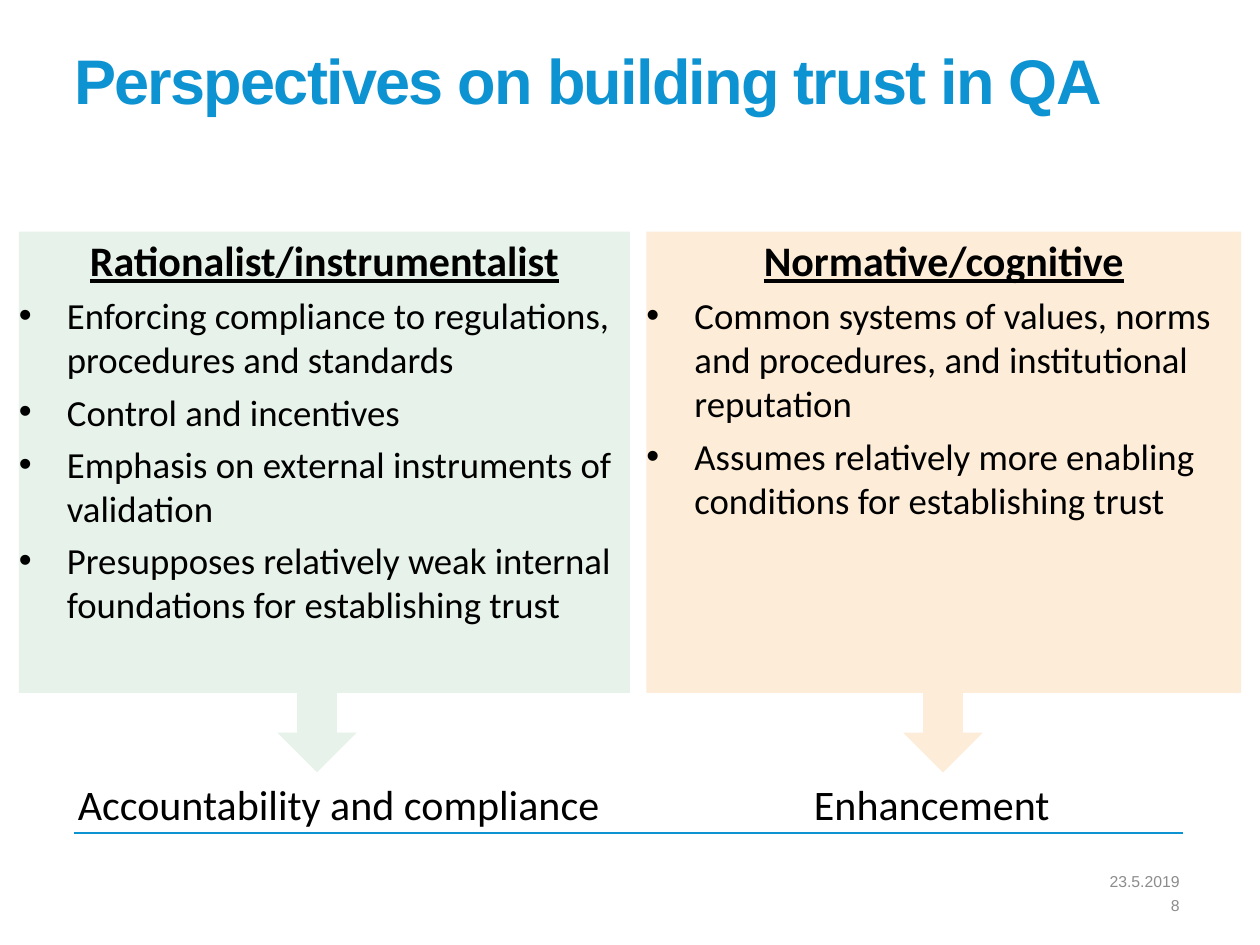
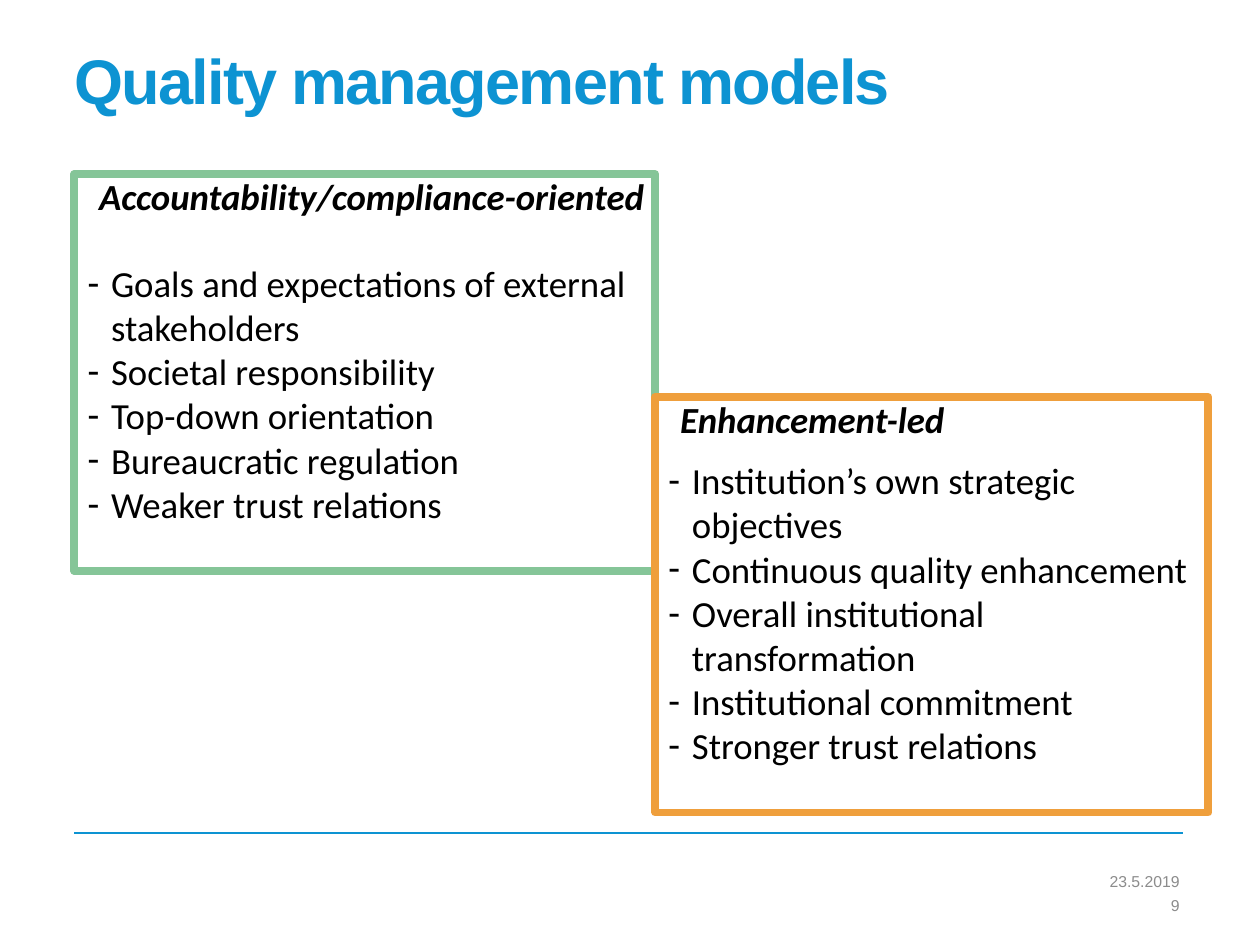
from lxml.etree import SubElement
from pptx import Presentation
from pptx.dml.color import RGBColor
from pptx.enum.shapes import MSO_CONNECTOR, MSO_SHAPE
from pptx.enum.text import MSO_ANCHOR, PP_ALIGN
from pptx.oxml.ns import qn
from pptx.util import Cm, Pt

COLORS = {
    "title": "0D93D2",
    "text": "000000",
    "footer": "8C8C8C",
    "pale green": "E7F3EA",
    "pale orange": "FCECD8",
    "green": "85C598",
    "orange": "EF9F3C",
}
DATE = "23.5.2019"
LEFT, RIGHT = 1.5, 23.85

PANEL_TOP, PANEL_HEIGHT = 4.67, 9.3
ARROW_TOP, ARROW_WIDTH, ARROW_HEIGHT = 13.61, 1.6, 1.96
LABEL_TOP, LABEL_HEIGHT = 15.7, 1.02


def rgb(name):
    return RGBColor.from_string(COLORS[name])


def set_insets(frame, right=0):
    frame.word_wrap = True
    frame.margin_left = frame.margin_top = frame.margin_bottom = 0
    frame.margin_right = right
    frame.vertical_anchor = MSO_ANCHOR.TOP


def add_span(paragraph, text, size, color="text", font="Calibri", **styles):
    """Add one run; styles are font attributes such as bold or italic."""
    span = paragraph.add_run()
    span.text = text
    span.font.name = font
    span.font.size = Pt(size)
    span.font.color.rgb = rgb(color)
    for style, value in styles.items():
        setattr(span.font, style, value)
    return span


def add_text(page, left, top, width, height):
    """Add an empty text box and return its frame."""
    frame = page.shapes.add_textbox(Cm(left), Cm(top), Cm(width), Cm(height)).text_frame
    set_insets(frame)
    return frame


def add_block(page, kind, left, top, width, height, fill=None, line=None):
    block = page.shapes.add_shape(kind, Cm(left), Cm(top), Cm(width), Cm(height))
    block.shadow.inherit = False
    if fill:
        block.fill.solid()
        block.fill.fore_color.rgb = rgb(fill)
    else:
        block.fill.background()
    if line:
        block.line.color.rgb = rgb(line)
        block.line.width = Pt(4.5)
    else:
        block.line.fill.background()
    set_insets(block.text_frame)
    return block


def add_bullets(frame, items, mark, margin, hanging, gap, first_gap):
    """Add 21-point items; first_gap sets the first one off from the heading."""
    for number, item in enumerate(items):
        paragraph = frame.add_paragraph()
        paragraph.alignment = PP_ALIGN.LEFT
        properties = paragraph._p.get_or_add_pPr()
        properties.set("marL", str(Cm(margin)))
        properties.set("indent", str(-Cm(hanging)))
        SubElement(properties, qn("a:buFont")).set("typeface", "Arial")
        SubElement(properties, qn("a:buChar")).set("char", mark)
        paragraph.space_before = Pt(gap if number else first_gap)
        add_span(paragraph, item, 21)


def add_footer(page, number):
    rule = page.shapes.add_connector(
        MSO_CONNECTOR.STRAIGHT, Cm(LEFT), Cm(16.79), Cm(RIGHT), Cm(16.79))
    rule.line.color.rgb = rgb("title")
    rule.line.width = Pt(1)
    SubElement(rule._element.spPr, qn("a:effectLst"))
    for text, top, height in ((DATE, 17.5, 0.51), (str(number), 18.01, 0.46)):
        frame = add_text(page, 13.72, top, 10.06, height)
        frame.vertical_anchor = MSO_ANCHOR.MIDDLE
        paragraph = frame.paragraphs[0]
        paragraph.alignment = PP_ALIGN.RIGHT
        add_span(paragraph, text, 9, "footer", "Arial")


def add_page(deck, title, number):
    page = deck.slides.add_slide(deck.slide_layouts[6])
    add_footer(page, number)
    paragraph = add_text(page, LEFT, 1.07, RIGHT - LEFT, 3.33).paragraphs[0]
    paragraph.line_spacing = 0.85
    span = add_span(paragraph, title, 36, "title", "Arial", bold=True)
    span.font._element.set("spc", "-100")
    return page


def add_perspective(page, left, width, color, heading, items):
    panel = add_block(page, MSO_SHAPE.RECTANGLE, left, PANEL_TOP, width, PANEL_HEIGHT, color)
    frame = panel.text_frame
    frame.margin_top = Cm(0.06)
    paragraph = frame.paragraphs[0]
    paragraph.alignment = PP_ALIGN.CENTER
    add_span(paragraph, heading, 24, bold=True, underline=True)
    add_bullets(frame, items, "•", 0.97, 0.97, gap=4.6, first_gap=4.6)


def add_outcome(page, arrow_left, color, label_left, label_width, label):
    """Add the arrow below a perspective and the result it points to."""
    add_block(page, MSO_SHAPE.DOWN_ARROW, arrow_left, ARROW_TOP,
              ARROW_WIDTH, ARROW_HEIGHT, color)
    frame = add_text(page, label_left, LABEL_TOP, label_width, LABEL_HEIGHT)
    add_span(frame.paragraphs[0], label, 24)


def add_model(page, left, top, width, height, color, heading, items, heading_gap):
    box = add_block(page, MSO_SHAPE.RECTANGLE, left, top, width, height, line=color)
    paragraph = box.text_frame.paragraphs[0]
    paragraph.alignment = PP_ALIGN.LEFT
    paragraph._p.get_or_add_pPr().set("marL", str(Cm(0.5)))
    add_span(paragraph, heading, 21, bold=True, italic=True)
    add_bullets(box.text_frame, items, "-", 0.74, 0.48, gap=0, first_gap=heading_gap)


def build_perspectives(deck):
    page = add_page(deck, "Perspectives on building trust in QA", 8)
    add_perspective(page, 0.38, 12.32, "pale green", "Rationalist/instrumentalist", [
        "Enforcing compliance to regulations, procedures and standards",
        "Control and incentives",
        "Emphasis on external instruments of validation",
        "Presupposes relatively weak internal foundations for establishing trust",
    ])
    add_perspective(page, 13.03, 11.99, "pale orange", "Normative/cognitive", [
        "Common systems of values, norms and procedures, and institutional reputation",
        "Assumes relatively more enabling conditions for establishing trust",
    ])
    add_outcome(page, 5.59, "pale green", 1.57, 10.77, "Accountability and compliance")
    add_outcome(page, 18.21, "pale orange", 16.41, 5.21, "Enhancement")


def build_models(deck):
    page = add_page(deck, "Quality management models", 9)
    add_model(page, LEFT, 3.51, 11.71, 8, "green", "Accountability/compliance-oriented", [
        "Goals and expectations of external stakeholders",
        "Societal responsibility",
        "Top-down orientation",
        "Bureaucratic regulation",
        "Weaker trust relations",
    ], heading_gap=24.4)
    add_model(page, 13.21, 8, 11.15, 8.38, "orange", "Enhancement-led", [
        "Institution’s own strategic objectives",
        "Continuous quality enhancement",
        "Overall institutional transformation",
        "Institutional commitment",
        "Stronger trust relations",
    ], heading_gap=9.8)


def main():
    deck = Presentation()
    deck.slide_width, deck.slide_height = Cm(25.4), Cm(19.05)
    build_perspectives(deck)
    build_models(deck)
    deck.save("out.pptx")


if __name__ == "__main__":
    main()
